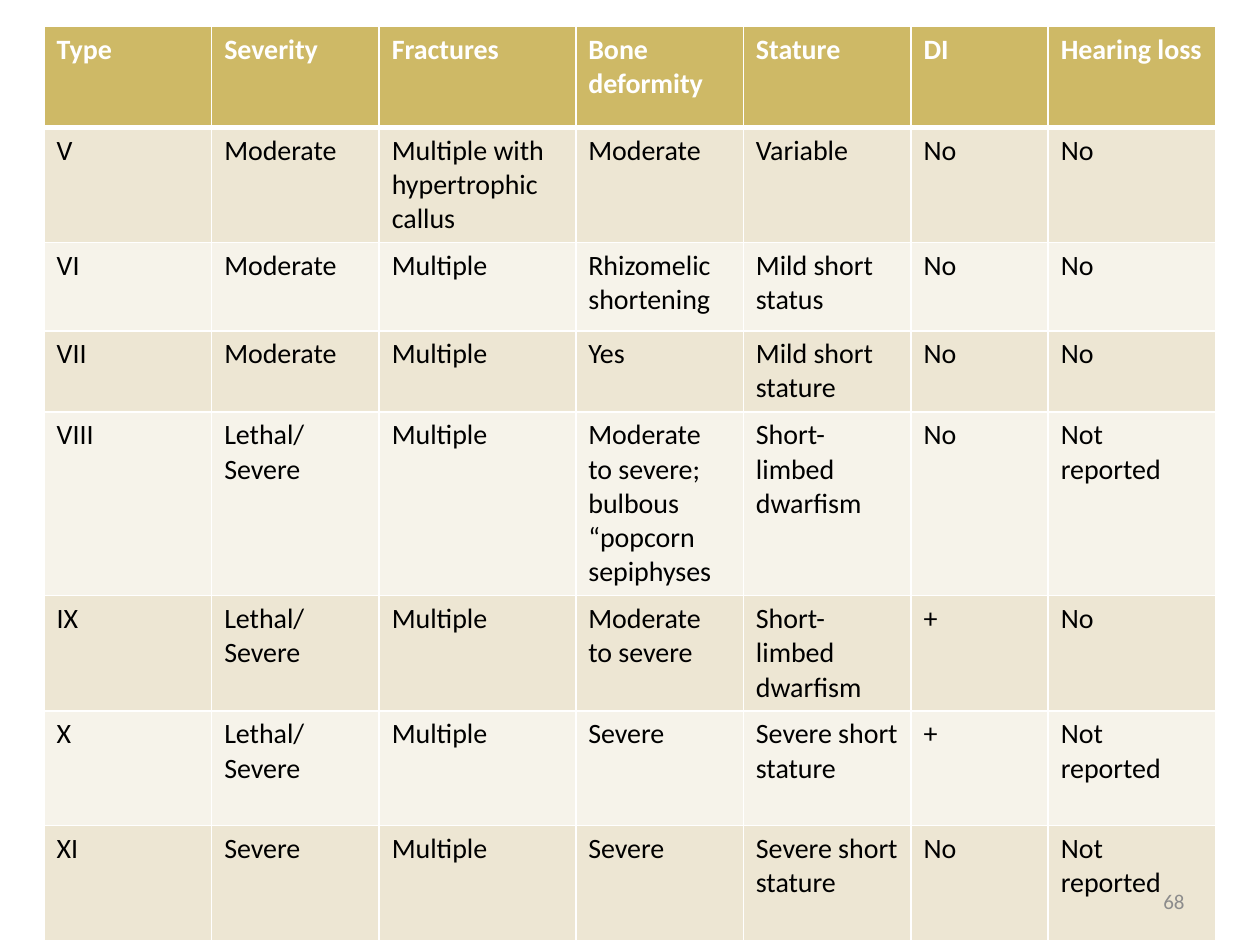
from dataclasses import dataclass

from lxml.etree import SubElement
from pptx import Presentation
from pptx.dml.color import RGBColor
from pptx.enum.text import MSO_ANCHOR, PP_ALIGN
from pptx.oxml.ns import qn
from pptx.util import Inches, Pt

# Content: a newline inside a cell starts a new paragraph
HEADERS = ["Type", "Severity", "Fractures", "Bone deformity", "Stature", "DI", "Hearing loss"]
OI_TYPES = [
    ["V", "Moderate", "Multiple with hypertrophic callus", "Moderate", "Variable", "No", "No"],
    ["VI", "Moderate", "Multiple", "Rhizomelic\nshortening", "Mild short status", "No", "No"],
    ["VII", "Moderate", "Multiple", "Yes", "Mild short stature", "No", "No"],
    ["VIII", "Lethal/\nSevere", "Multiple", "Moderate to severe; bulbous “popcorn sepiphyses",
     "Short-limbed dwarfism", "No", "Not reported"],
    ["IX", "Lethal/\nSevere", "Multiple", "Moderate to severe", "Short-limbed dwarfism", "+", "No"],
    ["X", "Lethal/\nSevere", "Multiple", "Severe", "Severe short stature", "+", "Not reported"],
    ["XI", "Severe", "Multiple", "Severe", "Severe short stature", "No", "Not reported"],
]
PAGE_NUMBER = "68"

COL_WIDTHS = [1.33, 1.33, 1.56, 1.33, 1.33, 1.09, 1.33]
ROW_HEIGHTS = [0.8, 0.91, 0.7, 0.64, 1.45, 0.91, 0.91, 0.91]


@dataclass(frozen=True)
class Theme:
    font: str = "Calibri"
    header: str = "CEB966"
    bands: tuple = ("EDE6D3", "F6F3EA")
    header_text: str = "FFFFFF"
    body_text: str = "000000"
    number_text: str = "8C8C8C"
    rule: str = "FFFFFF"
    thin: int = 1
    thick: int = 3
    table_size: int = 16
    number_size: int = 12


THEME = Theme()


def add_text(p, text, size, color, bold=False):
    r = p.add_run()
    r.text = text
    r.font.name, r.font.size, r.font.bold = THEME.font, Pt(size), bold
    r.font.color.rgb = RGBColor.from_string(color)


def set_borders(cell, top, bottom):
    tc_pr = cell._tc.get_or_add_tcPr()
    for side, width in (("L", THEME.thin), ("R", THEME.thin), ("T", top), ("B", bottom)):
        ln = SubElement(tc_pr, qn(f"a:ln{side}"), w=str(Pt(width)))
        SubElement(SubElement(ln, qn("a:solidFill")), qn("a:srgbClr"), val=THEME.rule)


def fill_cell(cell, text, row):
    is_header = row == 0
    # The heavy rule lies between the header and the first body row
    set_borders(cell, THEME.thick if row == 1 else THEME.thin,
                THEME.thick if is_header else THEME.thin)
    cell.fill.solid()
    fill = THEME.header if is_header else THEME.bands[(row - 1) % 2]
    cell.fill.fore_color.rgb = RGBColor.from_string(fill)
    color = THEME.header_text if is_header else THEME.body_text
    tf = cell.text_frame
    for i, line in enumerate(text.split("\n")):
        p = tf.add_paragraph() if i else tf.paragraphs[0]
        add_text(p, line, THEME.table_size, color, is_header)


prs = Presentation()
prs.slide_width, prs.slide_height = Inches(10), Inches(7.5)
s = prs.slides.add_slide(prs.slide_layouts[6])

# Table of types
rows = [HEADERS] + OI_TYPES
table = s.shapes.add_table(len(rows), len(HEADERS), Inches(0.35), Inches(0.21),
                           Inches(sum(COL_WIDTHS)), Inches(sum(ROW_HEIGHTS))).table
for col, width in zip(table.columns, COL_WIDTHS):
    col.width = Inches(width)
for row, height in zip(table.rows, ROW_HEIGHTS):
    row.height = Inches(height)
for i, values in enumerate(rows):
    for j, text in enumerate(values):
        fill_cell(table.cell(i, j), text, i)

# Page number
tf = s.shapes.add_textbox(Inches(7.17), Inches(6.95), Inches(2.33), Inches(0.4)).text_frame
tf.word_wrap = True
tf.vertical_anchor = MSO_ANCHOR.MIDDLE
p = tf.paragraphs[0]
p.alignment = PP_ALIGN.RIGHT
add_text(p, PAGE_NUMBER, THEME.number_size, THEME.number_text)

prs.save("out.pptx")
